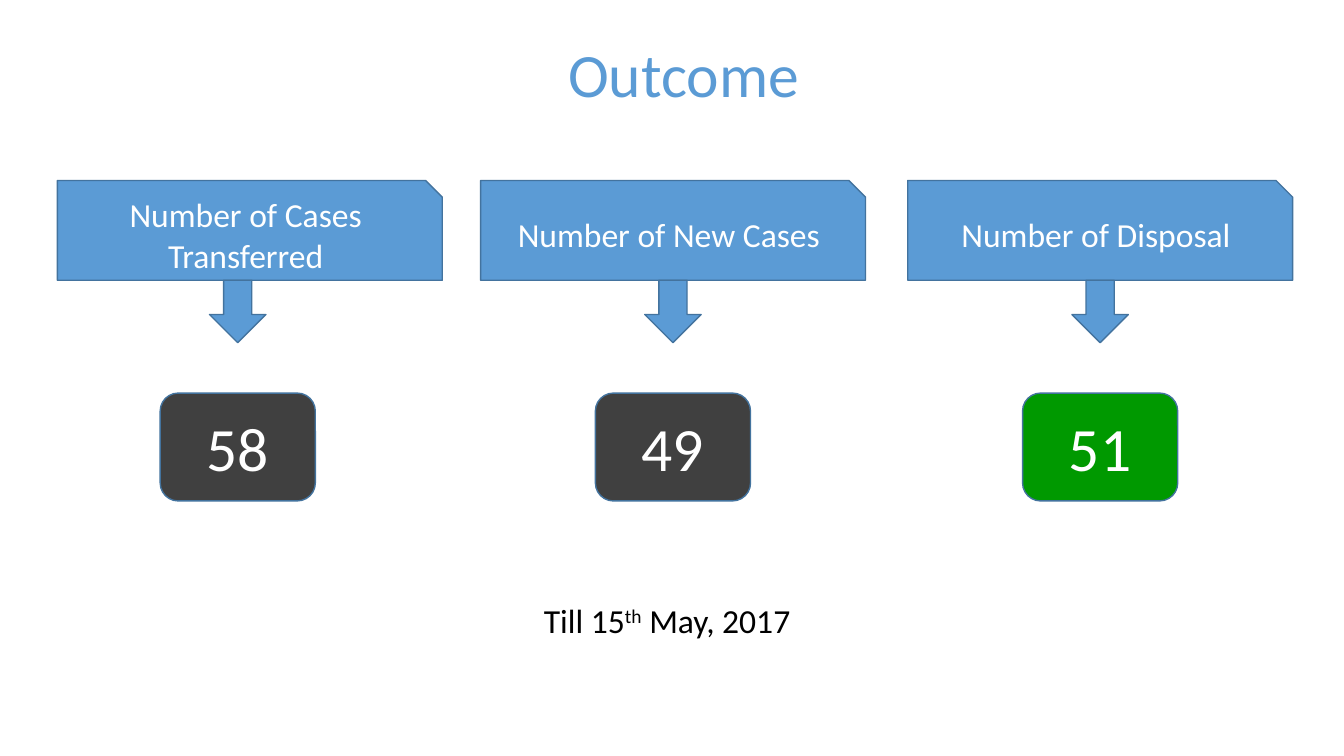
from pptx import Presentation
from pptx.dml.color import RGBColor
from pptx.enum import shapes, text
from pptx.util import Inches, Pt

TITLE = "Outcome"
# label, value, value fill, left of label, centre of arrow and value
COLUMNS = [
    ("Number of Cases Transferred", "58", "dark", 0.57, 2.36),
    ("Number of New Cases", "49", "dark", 4.77, 6.68),
    ("Number of Disposal", "51", "green", 9.01, 10.92),
]
DATE = [("Till 15", False), ("th", True), (" May, 2017", False)]

THEME = {
    "font": "Calibri",
    "blue": "5B9BD5", "outline": "43739E", "dark": "404040",
    "green": "009900", "white": "FFFFFF", "black": "000000",
    "big": 44, "body": 24,
}
LABEL_TOP, LABEL_W, LABEL_H = 1.79, 3.82, 0.99
ARROW_W, ARROW_H = 0.56, 0.62
VALUE_TOP, VALUE_W, VALUE_H = 3.9, 1.54, 1.07
KINDS = shapes.MSO_SHAPE


def color(name):
    return RGBColor.from_string(THEME[name])


def add_run(p, words, size, ink):
    r = p.add_run()
    r.text = words
    style = {"name": THEME["font"], "size": Pt(THEME[size])}
    for key, value in style.items():
        setattr(r.font, key, value)
    r.font.color.rgb = color(ink)
    return r


def write_centred(sp, words, size, ink):
    tf = sp.text_frame
    tf.word_wrap = True
    tf.vertical_anchor = text.MSO_ANCHOR.MIDDLE
    p = tf.paragraphs[0]
    p.alignment = text.PP_ALIGN.CENTER
    add_run(p, words, size, ink)
    return p


def add_block(slide, kind, box, fill, words="", size="body"):
    sp = slide.shapes.add_shape(kind, *map(Inches, box))
    sp.shadow.inherit = False
    sp.fill.solid()
    sp.fill.fore_color.rgb = color(fill)
    sp.line.color.rgb = color("outline")
    sp.line.width = Pt(1)
    if words:
        write_centred(sp, words, size, "white")


def add_column(slide, label, value, fill, left, centre):
    add_block(slide, KINDS.SNIP_1_RECTANGLE,
              (left, LABEL_TOP, LABEL_W, LABEL_H), "blue", label)
    add_block(slide, KINDS.DOWN_ARROW,
              (centre - ARROW_W / 2, LABEL_TOP + LABEL_H, ARROW_W, ARROW_H), "blue")
    add_block(slide, KINDS.ROUNDED_RECTANGLE,
              (centre - VALUE_W / 2, VALUE_TOP, VALUE_W, VALUE_H), fill, value, "big")


def add_date(slide):
    sp = slide.shapes.add_textbox(*map(Inches, (5.3, 5.9, 2.77, 0.5)))
    tf = sp.text_frame
    tf.word_wrap = False
    tf.auto_size = text.MSO_AUTO_SIZE.SHAPE_TO_FIT_TEXT
    for words, raised in DATE:
        r = add_run(tf.paragraphs[0], words, "body", "black")
        if raised:
            r._r.get_or_add_rPr().set("baseline", "30000")


def main():
    prs = Presentation()
    prs.slide_width, prs.slide_height = Inches(13.34), Inches(7.5)
    slide = prs.slides.add_slide(prs.slide_layouts[6])
    title = slide.shapes.add_textbox(*map(Inches, (1.03, 0.04, 11.51, 1.45)))
    write_centred(title, TITLE, "big", "blue").line_spacing = 0.9
    for column in COLUMNS:
        add_column(slide, *column)
    add_date(slide)
    prs.save("out.pptx")


if __name__ == "__main__":
    main()
